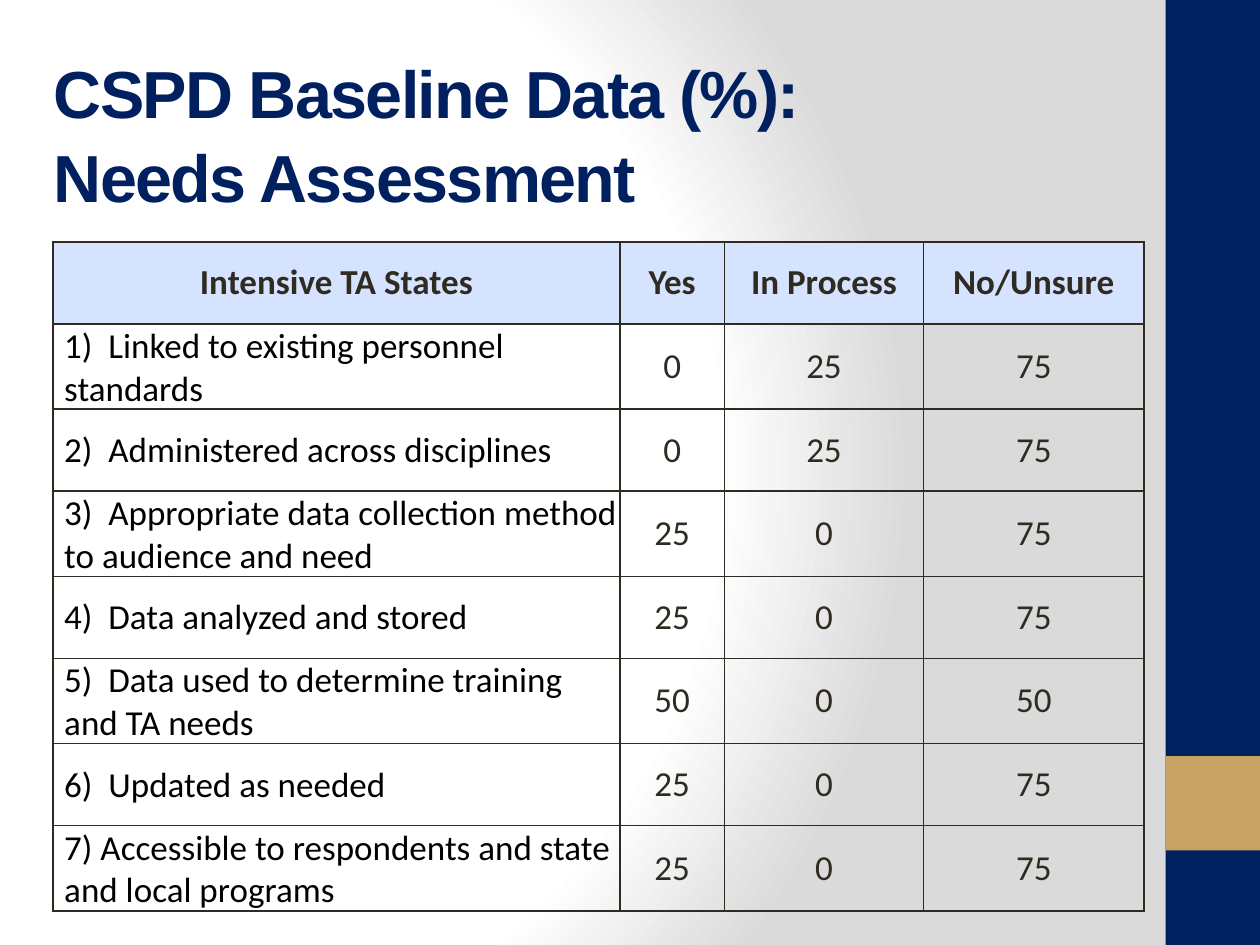
from pptx import Presentation, oxml
from pptx.dml import color
from pptx.enum import shapes, text
from pptx.oxml import ns
from pptx import util as u

WIDTH, HEIGHT = u.Inches(10), u.Inches(7.5)
COLORS = {"navy": "002060", "gold": "C8A464", "ink": "2F2B20", "black": "000000",
          "header": "D6E3FF", "white": "FFFFFF", "gray": "DADADA"}
COLUMN_SHARES = [0.45, 0.083, 0.158, 0.175]
ROW_SHARE = 0.65 / 7.5
HEADERS = ["Intensive TA States", "Yes", "In Process", "No/Unsure"]
ROWS = [
    ("1)  Linked to existing personnel standards", 0, 25, 75),
    ("2)  Administered across disciplines", 0, 25, 75),
    ("3)  Appropriate data collection method to audience and need", 25, 0, 75),
    ("4)  Data analyzed and stored", 25, 0, 75),
    ("5)  Data used to determine training and TA needs", 50, 0, 50),
    ("6)  Updated as needed", 25, 0, 75),
    ("7) Accessible to respondents and state and local programs", 25, 0, 75),
]
TITLE_FONT = {"name": "Arial", "size": u.Pt(38), "bold": True}
HEADER_FONT = {"name": "Calibri", "size": u.Pt(20), "bold": True}
BODY_FONT = {**HEADER_FONT, "bold": False}
LABEL_MARGINS = {"margin_left": u.Inches(0.01), "margin_top": u.Inches(0.01),
                 "margin_right": u.Inches(0.01), "margin_bottom": 0}


def rgb(name):
    return color.RGBColor.from_string(COLORS[name])


def set_attributes(target, values):
    for name, value in values.items():
        setattr(target, name, value)


def box(left, top, width, height):
    return [round(share * side) for share, side in
            zip((left, top, width, height), (WIDTH, HEIGHT) * 2)]


def format_font(font, values, color_name):
    set_attributes(font, values)
    font.color.rgb = rgb(color_name)


def paint_background(slide):
    slide.background.fill.solid()
    solid = slide._element.find(".//" + ns.qn("a:solidFill"))
    stops = "".join(
        f'<a:gs pos="{share * 1000}"><a:srgbClr val="{COLORS[name]}"/></a:gs>'
        for share, name in ((0, "white"), (75, "white"), (100, "gray")))
    gradient = oxml.parse_xml(
        f'<a:gradFill {ns.nsdecls("a")} rotWithShape="1"><a:gsLst>{stops}</a:gsLst>'
        '<a:path path="circle"><a:fillToRect l="20000" t="50000" r="100000" b="50000"/>'
        '</a:path></a:gradFill>')
    solid.getparent().replace(solid, gradient)


def add_band(slide, position, color_name):
    shape = slide.shapes.add_shape(shapes.MSO_SHAPE.RECTANGLE, *position)
    shape.shadow.inherit = False
    shape.fill.solid()
    shape.fill.fore_color.rgb = rgb(color_name)
    shape.line.fill.background()


def add_title(slide, wording, position):
    frame = slide.shapes.add_textbox(*position).text_frame
    set_attributes(frame, {"word_wrap": True, "vertical_anchor": text.MSO_ANCHOR.MIDDLE})
    paragraph = frame.paragraphs[0]
    paragraph.text = wording
    paragraph.line_spacing = 1.05
    for run in paragraph.runs:
        format_font(run.font, TITLE_FONT, "navy")
        run._r.get_or_add_rPr().set("spc", "-100")


def add_borders(cell):
    properties = cell._tc.get_or_add_tcPr()
    for index, side in enumerate("LRTB"):
        properties.insert(index, oxml.parse_xml(
            f'<a:ln{side} {ns.nsdecls("a")} w="{u.Pt(1)}"><a:solidFill>'
            f'<a:srgbClr val="{COLORS["ink"]}"/></a:solidFill></a:ln{side}>'))


def fill_cell(cell, value, is_header, is_label):
    cell.vertical_anchor = text.MSO_ANCHOR.MIDDLE
    if is_header:
        cell.fill.solid()
        cell.fill.fore_color.rgb = rgb("header")
    else:
        cell.fill.background()
    add_borders(cell)
    paragraph = cell.text_frame.paragraphs[0]
    run = paragraph.add_run()
    run.text = str(value)
    format_font(run.font, HEADER_FONT if is_header else BODY_FONT,
                "black" if is_label else "ink")
    if is_label:
        set_attributes(cell, LABEL_MARGINS)
        paragraph._p.get_or_add_pPr().set("marL", str(u.Inches(0.08)))
    else:
        paragraph.alignment = text.PP_ALIGN.CENTER


def add_survey_table(slide, left, top):
    data = [HEADERS, *ROWS]
    position = box(left, top, sum(COLUMN_SHARES), ROW_SHARE * len(data))
    table = slide.shapes.add_table(len(data), len(HEADERS), *position).table
    set_attributes(table, {"first_row": False, "horz_banding": False})
    for column, share in zip(table.columns, COLUMN_SHARES):
        column.width = round(share * WIDTH)
    for row_index, values in enumerate(data):
        table.rows[row_index].height = round(ROW_SHARE * HEIGHT)
        for column_index, value in enumerate(values):
            is_header = row_index == 0
            fill_cell(table.cell(row_index, column_index), value,
                      is_header, column_index == 0 and not is_header)


def main():
    presentation = Presentation()
    set_attributes(presentation, {"slide_width": WIDTH, "slide_height": HEIGHT})
    slide = presentation.slides.add_slide(presentation.slide_layouts[6])
    paint_background(slide)
    add_band(slide, box(0.925, 0, 0.075, 1), "navy")
    add_band(slide, box(0.925, 0.8, 0.075, 0.1), "gold")
    add_title(slide, "CSPD Baseline Data (%): \vNeeds Assessment",
              box(0.033, 0.42 / 7.5, 0.85, 1.25 / 7.5))
    add_survey_table(slide, 0.042, 1.92 / 7.5)
    presentation.save("out.pptx")


if __name__ == "__main__":
    main()
